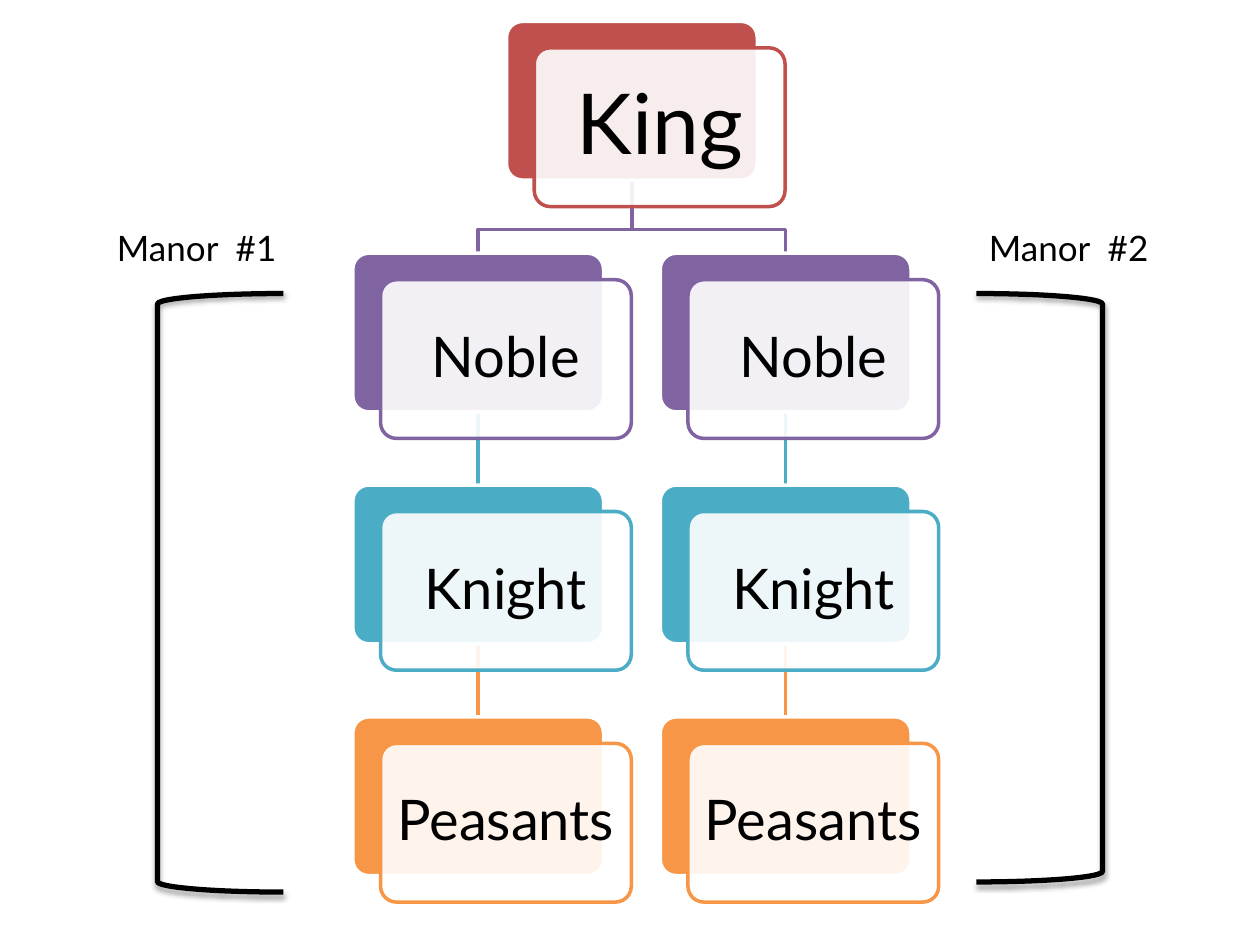
from dataclasses import dataclass
from lxml.etree import SubElement
from pptx import Presentation
from pptx.dml.color import RGBColor
from pptx.enum.shapes import MSO_CONNECTOR, MSO_SHAPE
from pptx.enum.text import MSO_ANCHOR, PP_ALIGN
from pptx.oxml.ns import qn
from pptx.util import Inches, Pt


@dataclass
class Theme:
    font: str = "Lato"
    ink: str = "000000"
    paper: str = "FFFFFF"
    king: str = "C0504D"
    noble: str = "8064A2"
    knight: str = "4BACC6"
    peasant: str = "F79646"
    large: int = 48
    medium: int = 32
    small: int = 20


theme = Theme()
color = RGBColor.from_string


def write(shape, text, size=theme.small, align=PP_ALIGN.LEFT,
          anchor=MSO_ANCHOR.TOP, inset=None, space=None):
    frame = shape.text_frame
    frame.word_wrap = True
    frame.vertical_anchor = anchor
    if inset is not None:
        frame.margin_left = frame.margin_right = Inches(inset)
        frame.margin_top = frame.margin_bottom = Inches(inset)
    line = frame.paragraphs[0]
    line.alignment = align
    line.line_spacing = space
    run = line.add_run()
    run.text = text
    run.font.name = theme.font
    run.font.size = Pt(size)
    run.font.color.rgb = color(theme.ink)


def style(shape, edge, weight, fill=None):
    shape.shadow.inherit = False
    shape.line.color.rgb = color(edge)
    shape.line.width = Pt(weight)
    if fill:
        shape.fill.solid()
        shape.fill.fore_color.rgb = color(fill)
    else:
        shape.fill.background()


deck = Presentation()
deck.slide_width, deck.slide_height = Inches(10), Inches(7.5)
shapes = deck.slides.add_slide(deck.slide_layouts[6]).shapes

wide, high = 1.99, 1.26
shift_x, shift_y = 0.22, 0.21
top, step = 0.17, 1.84
king_x, cols = 4.02, (2.8, 5.24)
ranks = [("Noble", theme.noble), ("Knight", theme.knight), ("Peasants", theme.peasant)]

for left in cols:
    mid, king_mid = left + wide / 2, king_x + wide / 2
    start = Inches(king_mid), Inches(top + high)
    path = shapes.build_freeform(*start)
    bend = Inches(1.82)
    path.add_line_segments([(Inches(king_mid), bend), (Inches(mid), bend),
                            (Inches(mid), Inches(top + step))], close=False)
    style(path.convert_to_shape(), theme.noble, 2)
    for row, (name, hue) in enumerate(ranks[1:], 2):
        end = top + row * step
        link = shapes.add_connector(MSO_CONNECTOR.STRAIGHT, Inches(mid),
                                    Inches(end - step + high), Inches(mid), Inches(end))
        link.line.color.rgb = color(hue)
        link.line.width = Pt(2)
        SubElement(link.element.spPr, qn("a:effectLst"))

cards = [("King", theme.king, king_x, top, theme.large)]
for left in cols:
    for row, (name, hue) in enumerate(ranks, 1):
        cards.append((name, hue, left, top + row * step, theme.medium))

for name, hue, x, y, size in cards:
    back = shapes.add_shape(MSO_SHAPE.ROUNDED_RECTANGLE, Inches(x), Inches(y),
                            Inches(wide), Inches(high))
    style(back, theme.paper, 2, hue)
    front = shapes.add_shape(MSO_SHAPE.ROUNDED_RECTANGLE, Inches(x + shift_x),
                             Inches(y + shift_y), Inches(wide), Inches(high))
    style(front, hue, 2, theme.paper)
    back.adjustments[0] = front.adjustments[0] = 0.1
    tint = front.element.spPr.find(qn("a:solidFill")).find(qn("a:srgbClr"))
    SubElement(tint, qn("a:alpha"), val="90000")
    write(front, name, size=size, align=PP_ALIGN.CENTER,
          anchor=MSO_ANCHOR.MIDDLE, inset=0.08, space=0.9)

manors = [("Manor  #1", 0.83, MSO_SHAPE.LEFT_BRACKET, 1.25, 4.75),
          ("Manor  #2", 7.75, MSO_SHAPE.RIGHT_BRACKET, 7.75, 4.67)]
for name, left, kind, x, tall in manors:
    brace = shapes.add_shape(kind, Inches(x), Inches(2.33), Inches(1), Inches(tall))
    style(brace, theme.ink, 3)
    glow = SubElement(brace.element.spPr.find(qn("a:effectLst")), qn("a:outerShdw"),
                      blurRad=str(Pt(3.1)), dist=str(Pt(1.8)), dir="5400000", rotWithShape="0")
    shade = SubElement(glow, qn("a:srgbClr"), val=theme.ink)
    SubElement(shade, qn("a:alpha"), val="35000")
    label = shapes.add_textbox(Inches(left), Inches(1.75), Inches(1.83), Inches(0.44))
    write(label, name)

deck.save("out.pptx")
